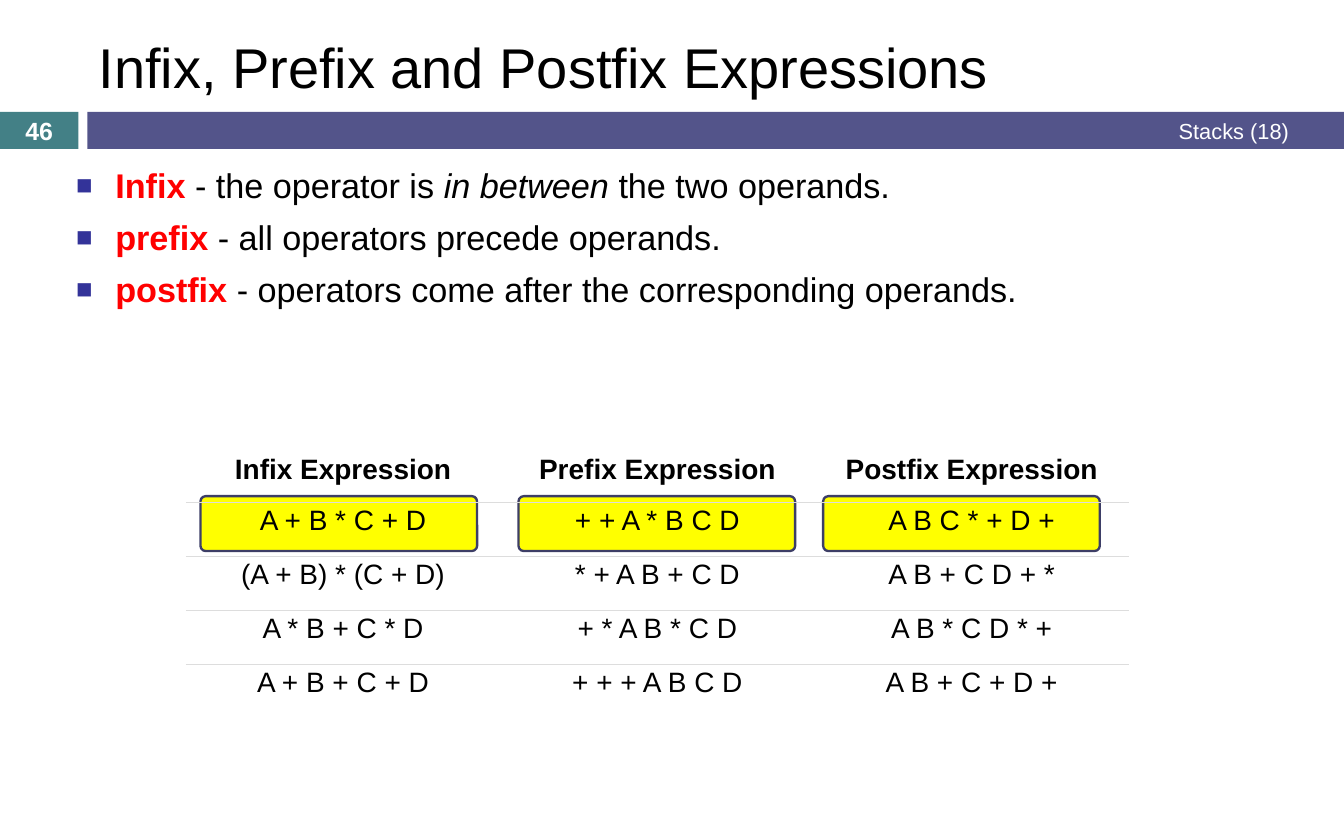
from lxml import etree
from pptx import Presentation
from pptx.dml.color import RGBColor
from pptx.enum.shapes import MSO_SHAPE
from pptx.enum.text import MSO_ANCHOR, MSO_AUTO_SIZE, PP_ALIGN
from pptx.oxml.ns import qn
from pptx.util import Inches, Pt

RECT, ROUNDED = MSO_SHAPE.RECTANGLE, MSO_SHAPE.ROUNDED_RECTANGLE
TOP, MIDDLE, BOTTOM = MSO_ANCHOR.TOP, MSO_ANCHOR.MIDDLE, MSO_ANCHOR.BOTTOM
LEFT, CENTER, RIGHT = PP_ALIGN.LEFT, PP_ALIGN.CENTER, PP_ALIGN.RIGHT
NO_FIT = MSO_AUTO_SIZE.NONE


def style(font, size, color, bold=False):
    font.name, font.size, font.bold = "Arial", Pt(size), bold
    font.color.rgb = RGBColor.from_string(color)


def add_xml(parent, tag, **attrs):
    return etree.SubElement(parent, qn(tag), attrs)


prs = Presentation()
prs.slide_width, prs.slide_height = Inches(12), Inches(7.5)
s = prs.slides.add_slide(prs.slide_layouts[1])

# Title
title = s.shapes.title
title.left, title.top, title.width, title.height = (
    Inches(0.78), Inches(0.19), Inches(10.7), Inches(0.8))
tf = title.text_frame
tf.text = "Infix, Prefix and Postfix Expressions"
tf.auto_size, tf.vertical_anchor = NO_FIT, MIDDLE
p = tf.paragraphs[0]
p.alignment = LEFT
style(p.font, 36, "000000")

# Definitions
body = s.placeholders[1]
body.left, body.top, body.width, body.height = (
    Inches(0.58), Inches(1.42), Inches(10.09), Inches(2.08))
tf = body.text_frame
tf.auto_size, tf.vertical_anchor = NO_FIT, TOP
definitions = [
    ("Infix", [(" - the operator is ", False), ("in between", True),
               (" the two operands.", False)]),
    ("prefix", [(" - all operators precede operands.", False)]),
    ("postfix", [(" - operators come after the corresponding operands.", False)]),
]
for i, (term, parts) in enumerate(definitions):
    p = tf.paragraphs[0] if i == 0 else tf.add_paragraph()
    p.space_before = Pt(7)
    pPr = p._p.get_or_add_pPr()
    pPr.set("marL", str(Inches(0.35)))
    pPr.set("indent", str(Inches(-0.35)))
    add_xml(add_xml(pPr, "a:buClr"), "a:srgbClr", val="333399")
    add_xml(pPr, "a:buSzPct", val="80000")
    add_xml(pPr, "a:buFont", typeface="Arial")
    add_xml(pPr, "a:buChar", char="■")
    r = p.add_run()
    r.text = term
    style(r.font, 22, "FF0000", bold=True)
    for text, italic in parts:
        r = p.add_run()
        r.text = text
        style(r.font, 22, "000000")
        r.font.italic = italic

# Page number and section bars
bars = [
    (0, 0.7, "438086", "46", 16, True, CENTER, 0),
    (0.78, 11.22, "53548A", "Stacks (18)", 14, False, RIGHT, 0.49),
]
for left, width, fill, text, size, bold, align, margin in bars:
    sp = s.shapes.add_shape(RECT, Inches(left), Inches(1), Inches(width), Inches(0.33))
    sp.shadow.inherit = False
    sp.fill.solid()
    sp.fill.fore_color.rgb = RGBColor.from_string(fill)
    sp.line.fill.background()
    tf = sp.text_frame
    tf.text = text
    tf.vertical_anchor = MIDDLE
    tf.margin_left = tf.margin_top = tf.margin_bottom = 0
    tf.margin_right = Inches(margin)
    p = tf.paragraphs[0]
    p.alignment = align
    style(p.font, size, "FFFFFF", bold)

# Highlights behind the first row of expressions
for left in (1.79, 4.63, 7.35):
    sp = s.shapes.add_shape(ROUNDED, Inches(left), Inches(4.43), Inches(2.47), Inches(0.49))
    sp.adjustments[0] = 0.094
    sp.shadow.inherit = False
    sp.fill.solid()
    sp.fill.fore_color.rgb = RGBColor.from_string("FFFF00")
    sp.line.color.rgb = RGBColor.from_string("3D3E66")
    sp.line.width = Pt(1.5)

# Expression table
rows = [
    ("Infix Expression", "Prefix Expression", "Postfix Expression"),
    ("A + B * C + D", "+ + A * B C D", "A B C * + D +"),
    ("(A + B) * (C + D)", "* + A B + C D", "A B + C D + *"),
    ("A * B + C * D", "+ * A B * C D", "A B * C D * +"),
    ("A + B + C + D", "+ + + A B C D", "A B + C + D +"),
]
table = s.shapes.add_table(len(rows), 3, Inches(1.66), Inches(4),
                           Inches(8.42), Inches(2.41)).table
table.first_row = table.horz_banding = False
for i, row in enumerate(rows):
    header = i == 0
    for j, text in enumerate(row):
        cell = table.cell(i, j)
        cell.text = text
        cell.vertical_anchor = BOTTOM if header else TOP
        cell.margin_left = cell.margin_right = cell.margin_top = Inches(0.03)
        cell.margin_bottom = Inches(0.15 if header else 0.03)
        p = cell.text_frame.paragraphs[0]
        p.alignment = CENTER
        style(p.font, 18, "000000", bold=header)
        tcPr = cell._tc.get_or_add_tcPr()
        ruled = {"a:lnL": False, "a:lnR": False,
                 "a:lnT": not header, "a:lnB": i < len(rows) - 1}
        for side, visible in ruled.items():
            ln = add_xml(tcPr, side, w=str(Pt(0.3)))
            if visible:
                add_xml(add_xml(ln, "a:solidFill"), "a:srgbClr", val="DDDDDD")
            else:
                add_xml(ln, "a:noFill")
        cell.fill.background()

prs.save("out.pptx")
